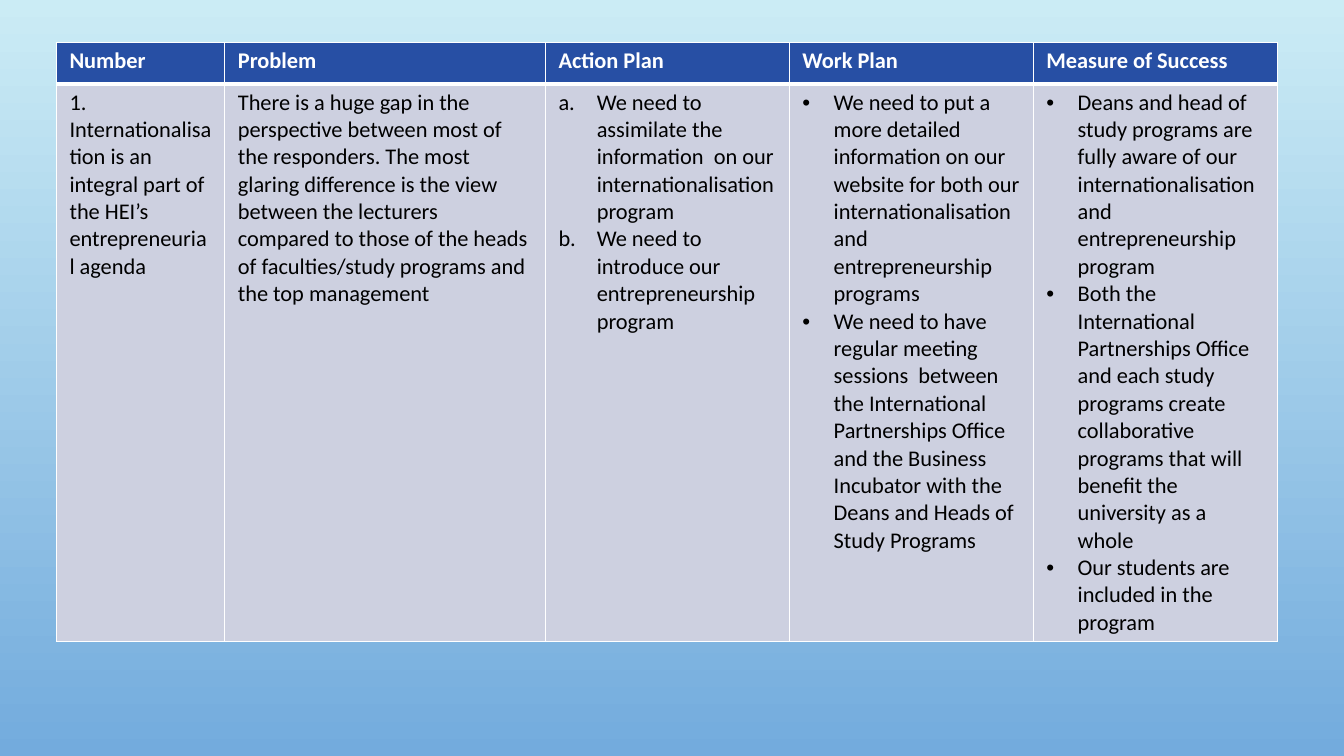
from lxml import etree
from pptx import Presentation
from pptx import util as u
from pptx.dml.color import RGBColor
from pptx.oxml import ns

SKY_TOP = RGBColor(0xCB, 0xEC, 0xF5)
SKY_BOTTOM = RGBColor(0x73, 0xAB, 0xDD)
HEADER_BLUE = RGBColor(0x27, 0x4F, 0xA4)
BODY_GREY = RGBColor(0xCD, 0xD0, 0xE0)
WHITE = RGBColor(0xFF, 0xFF, 0xFF)
BLACK = RGBColor(0, 0, 0)

# heading, width in inches, list marker, paragraphs
COLUMNS = [
    ("Number", 1.67, None, [
        "1. Internationalisation is an integral part of the HEI’s entrepreneurial agenda"]),
    ("Problem", 3.18, None, [
        "There is a huge gap in the perspective between most of the responders. "
        "The most glaring difference is the view between the lecturers compared to "
        "those of the heads of faculties/study programs and the top management"]),
    ("Action Plan", 2.42, "letter", [
        "We need to assimilate the information  on our internationalisation program",
        "We need to introduce our entrepreneurship program"]),
    ("Work Plan", 2.42, "dot", [
        "We need to put a more detailed information on our website for both our "
        "internationalisation and entrepreneurship programs",
        "We need to have regular meeting sessions  between the International "
        "Partnerships Office and the Business Incubator with the Deans and Heads "
        "of Study Programs"]),
    ("Measure of Success", 2.42, "dot", [
        "Deans and head of study programs are fully aware of our "
        "internationalisation and entrepreneurship program",
        "Both the International Partnerships Office and each study programs create "
        "collaborative programs that will benefit the university as a whole",
        "Our students are included in the program"]),
]
ROW_HEIGHTS = [0.41, 5.16]
INDENTS = {"letter": 0.38, "dot": 0.31}


def add_marker(para, marker):
    """Give the paragraph a hanging indent with a letter or a dot."""
    props = para._p.get_or_add_pPr()
    indent = u.Inches(INDENTS[marker])
    props.set("marL", str(indent))
    props.set("indent", str(-indent))
    if marker == "letter":
        etree.SubElement(props, ns.qn("a:buFont"), typeface="+mj-lt")
        etree.SubElement(props, ns.qn("a:buAutoNum"), type="alphaLcPeriod")
    else:
        etree.SubElement(props, ns.qn("a:buFont"), typeface="Arial")
        etree.SubElement(props, ns.qn("a:buChar"), char="•")


def style_cell(cell, borders, fill, ink, bold):
    """Set borders (points by side), margins, fill and text style of a cell."""
    props = cell._tc.get_or_add_tcPr()
    for side, points in borders.items():
        line = etree.SubElement(props, ns.qn(f"a:ln{side}"), w=str(u.Pt(points)))
        paint = etree.SubElement(line, ns.qn("a:solidFill"))
        etree.SubElement(paint, ns.qn("a:srgbClr"), val=str(WHITE))
    cell.fill.solid()
    cell.fill.fore_color.rgb = fill
    cell.margin_left = cell.margin_right = u.Inches(0.13)
    cell.margin_top = cell.margin_bottom = u.Inches(0.05)
    for para in cell.text_frame.paragraphs:
        for span in para.runs:
            span.font.name = "Calibri"
            span.font.size = u.Pt(16)
            span.font.bold = bold
            span.font.color.rgb = ink


deck = Presentation()
deck.slide_width, deck.slide_height = u.Inches(13.33), u.Inches(7.5)
page = deck.slides.add_slide(deck.slide_layouts[6])

sky = page.background.fill
sky.gradient()
sky.gradient_angle = 270
for stop, colour, position in zip(sky.gradient_stops, (SKY_TOP, SKY_BOTTOM), (0, 1)):
    stop.color.rgb = colour
    stop.position = position

table = page.shapes.add_table(
    len(ROW_HEIGHTS), len(COLUMNS), u.Inches(0.56), u.Inches(0.42),
    u.Inches(sum(column[1] for column in COLUMNS)), u.Inches(sum(ROW_HEIGHTS))).table
for row, height in zip(table.rows, ROW_HEIGHTS):
    row.height = u.Inches(height)

for index, (heading, width, marker, paragraphs) in enumerate(COLUMNS):
    table.columns[index].width = u.Inches(width)
    header, body = table.cell(0, index), table.cell(1, index)
    header.text_frame.text = heading
    body.text_frame.text = "\n".join(paragraphs)
    if marker:
        for para in body.text_frame.paragraphs:
            add_marker(para, marker)
    style_cell(header, {"L": 1, "R": 1, "T": 1, "B": 3}, HEADER_BLUE, WHITE, True)
    style_cell(body, {"L": 1, "R": 1, "T": 3, "B": 1}, BODY_GREY, BLACK, False)

deck.save("out.pptx")
